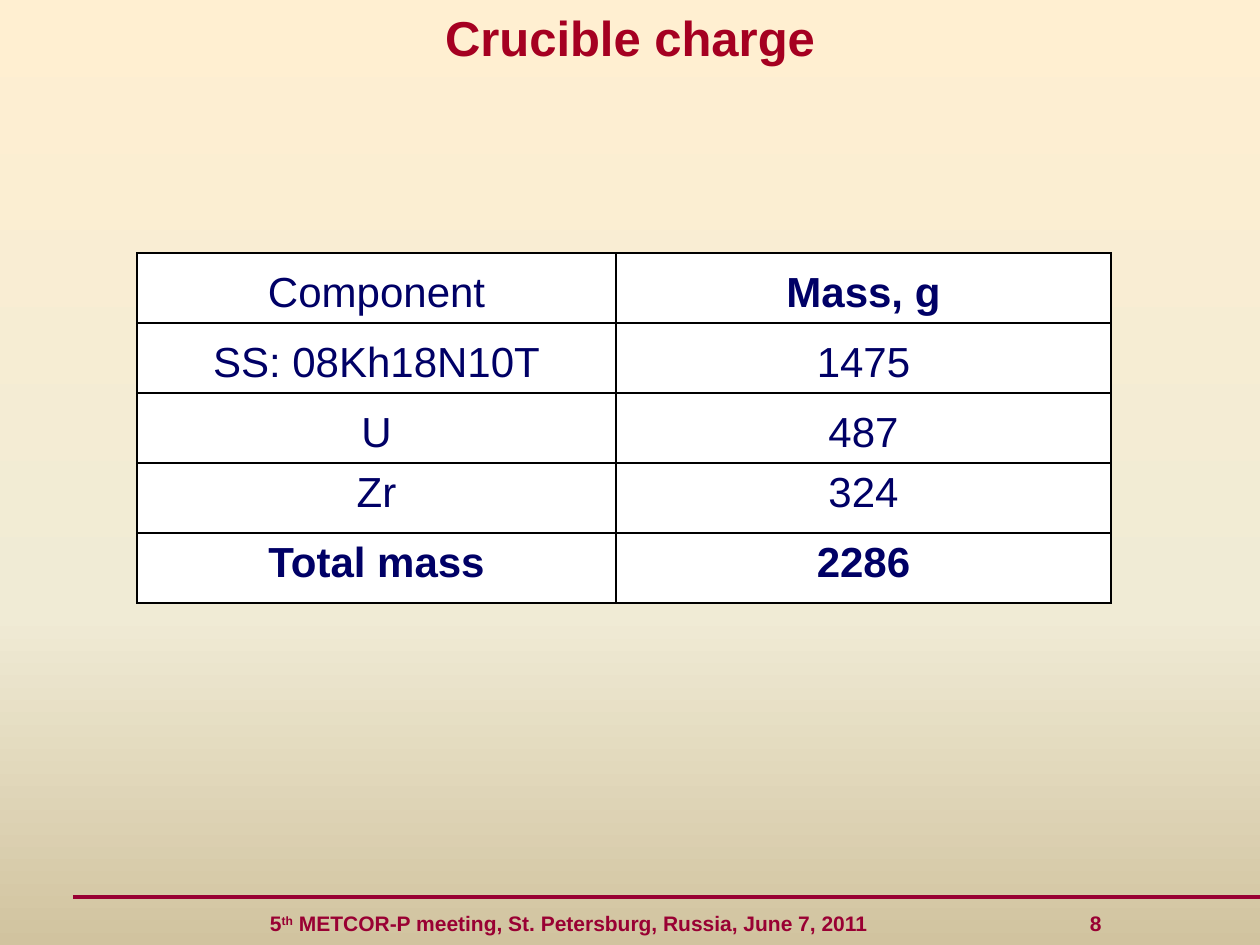
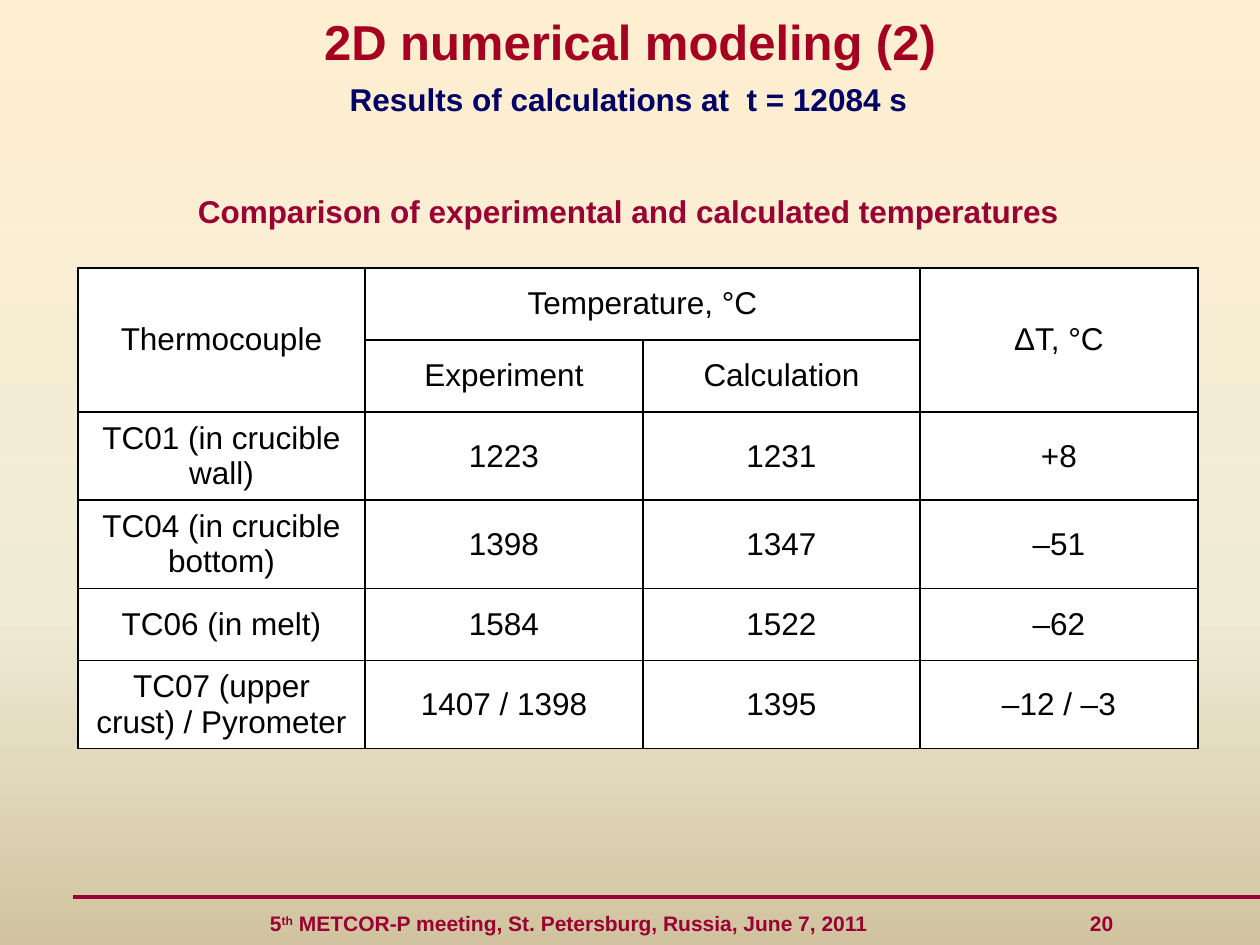
from typing import NamedTuple

from lxml.etree import SubElement
from pptx import Presentation
from pptx.dml.color import RGBColor
from pptx.enum.shapes import MSO_CONNECTOR
from pptx.enum.text import MSO_ANCHOR, MSO_AUTO_SIZE, PP_ALIGN
from pptx.oxml.ns import qn
from pptx.presentation import Presentation as Deck
from pptx.slide import Slide
from pptx.table import _Cell
from pptx.text.text import TextFrame
from pptx.util import Emu, Pt

# Shared look
PX_PER_INCH = 126
EMU_PER_PX = 914400 / PX_PER_INCH
SLIDE_WIDTH, SLIDE_HEIGHT = 1260, 945
FONT = "Arial"
TITLE_RED, BURGUNDY, NAVY = "A50021", "990033", "000066"
BLACK, WHITE = "000000", "FFFFFF"
BACKGROUND_STOPS = ((0, "FFEFD1"), (65, "F0EBD5"), (100, "D1C39F"))
MEETING = " METCOR-P meeting, St. Petersburg, Russia, June 7, 2011"
PAGE_NUMBER_TAB = 820


class Box(NamedTuple):
    left: int
    top: int
    width: int
    height: int


class TextStyle(NamedTuple):
    size: int
    color: str
    bold: bool = False


class Heading(NamedTuple):
    text: str
    box: Box
    color: str


class TableSpec(NamedTuple):
    left: int
    top: int
    columns: tuple[int, ...]
    row_height: int
    rows: tuple[tuple[str, ...], ...]
    style: TextStyle
    anchors: tuple[MSO_ANCHOR, ...]
    bold_cells: tuple[tuple[int, int], ...] = ()
    merges: tuple[tuple[int, int, int, int], ...] = ()


TITLE_BOX = Box(0, 0, SLIDE_WIDTH, 82)
FOOTER_BOX = Box(252, 892, 905, 63)
TITLE_STYLE = TextStyle(28, TITLE_RED, True)
FOOTER_STYLE = TextStyle(12, BURGUNDY, True)

CHARGE_TABLE = TableSpec(
    left=137, top=253, columns=(479, 495), row_height=70,
    rows=(
        ("Component", "Mass, g"),
        ("SS: 08Kh18N10T", "1475"),
        ("U", "487"),
        ("Zr", "324"),
        ("Total mass", "2286"),
    ),
    style=TextStyle(24, NAVY),
    anchors=(MSO_ANCHOR.BOTTOM,) * 3 + (MSO_ANCHOR.TOP,) * 2,
    bold_cells=((0, 1), (4, 0), (4, 1)),
)

TEMPERATURE_TABLE = TableSpec(
    left=78, top=268, columns=(287, 278, 277, 278), row_height=72,
    rows=(
        ("Thermocouple", "Temperature, °C", "", "ΔT, °C"),
        ("", "Experiment", "Calculation", ""),
        ("TC01 (in crucible wall)", "1223", "1231", "+8"),
        ("TC04 (in crucible bottom)", "1398", "1347", "–51"),
        ("TC06 (in melt)", "1584", "1522", "–62"),
        ("TC07 (upper crust) / Pyrometer", "1407 / 1398", "1395", "–12 / –3"),
    ),
    style=TextStyle(18, BLACK),
    anchors=(MSO_ANCHOR.MIDDLE,) * 6,
    merges=((0, 0, 1, 0), (0, 1, 0, 2), (0, 3, 1, 3)),
)

MODELING_HEADINGS = (
    Heading("Results of calculations at  t = 12084 s", Box(243, 76, 771, 45), NAVY),
    Heading("Comparison of experimental and calculated temperatures",
            Box(122, 188, 1013, 45), BURGUNDY),
)


def px(length: int) -> Emu:
    return Emu(round(length * EMU_PER_PX))


def place(box: Box) -> tuple[Emu, ...]:
    return tuple(px(length) for length in box)


def rgb(color: str) -> RGBColor:
    return RGBColor.from_string(color)


def format_text(text_frame: TextFrame, style: TextStyle,
                alignment: PP_ALIGN = PP_ALIGN.CENTER) -> None:
    for paragraph in text_frame.paragraphs:
        paragraph.alignment = alignment
        for run in paragraph.runs:
            run.font.name = FONT
            run.font.size = Pt(style.size)
            run.font.bold = style.bold
            run.font.color.rgb = rgb(style.color)


# Shared parts
def set_background(presentation: Deck) -> None:
    master = presentation.slide_master
    fill = master.background.fill
    fill.gradient()
    fill.gradient_angle = 270
    stop_list = next(master.element.iter(qn("a:gsLst")))
    stop_list.clear()
    for percent, color in BACKGROUND_STOPS:
        stop = SubElement(stop_list, qn("a:gs"), pos=str(percent * 1000))
        SubElement(stop, qn("a:srgbClr"), val=color)


def add_title(slide: Slide, text: str, anchor: MSO_ANCHOR) -> None:
    title = slide.shapes.title
    title.left, title.top, title.width, title.height = place(TITLE_BOX)
    text_frame = title.text_frame
    text_frame.text = text
    text_frame.auto_size = MSO_AUTO_SIZE.NONE
    text_frame.word_wrap = True
    text_frame.vertical_anchor = anchor
    text_frame.margin_top = text_frame.margin_bottom = px(7)
    format_text(text_frame, TITLE_STYLE)


def add_heading(slide: Slide, heading: Heading) -> None:
    text_frame = slide.shapes.add_textbox(*place(heading.box)).text_frame
    text_frame.text = heading.text
    text_frame.word_wrap = True
    text_frame.vertical_anchor = MSO_ANCHOR.MIDDLE
    format_text(text_frame, TextStyle(18, heading.color, True))


def add_footer(slide: Slide, page_number: int) -> None:
    rule = slide.shapes.add_connector(
        MSO_CONNECTOR.STRAIGHT, px(73), px(897), px(SLIDE_WIDTH), px(897))
    rule.line.color.rgb = rgb(BURGUNDY)
    rule.line.width = Pt(2.25)
    SubElement(rule._element.spPr, qn("a:effectLst"))

    text_frame = slide.shapes.add_textbox(*place(FOOTER_BOX)).text_frame
    text_frame.word_wrap = True
    text_frame.vertical_anchor = MSO_ANCHOR.MIDDLE
    text_frame.margin_left = px(18)
    paragraph = text_frame.paragraphs[0]
    for text in ("5", "th", f"{MEETING}\t{page_number}"):
        paragraph.add_run().text = text
    format_text(text_frame, FOOTER_STYLE, PP_ALIGN.LEFT)
    paragraph.runs[1].font._element.set("baseline", "30000")
    tab_list = SubElement(paragraph._p.get_or_add_pPr(), qn("a:tabLst"))
    SubElement(tab_list, qn("a:tab"), pos=str(px(PAGE_NUMBER_TAB)), algn="l")


# Tables
def format_cell(cell: _Cell) -> None:
    properties = cell._tc.get_or_add_tcPr()
    for side in ("lnL", "lnR", "lnT", "lnB"):
        border = SubElement(properties, qn(f"a:{side}"), w=str(Pt(1)))
        border_fill = SubElement(border, qn("a:solidFill"))
        SubElement(border_fill, qn("a:srgbClr"), val=BLACK)
    cell.fill.solid()
    cell.fill.fore_color.rgb = rgb(WHITE)


def add_table(slide: Slide, spec: TableSpec) -> None:
    row_count = len(spec.rows)
    box = Box(spec.left, spec.top, sum(spec.columns), spec.row_height * row_count)
    table = slide.shapes.add_table(row_count, len(spec.columns), *place(box)).table
    table.first_row = table.horz_banding = False
    for column, width in zip(table.columns, spec.columns):
        column.width = px(width)
    for row_index, texts in enumerate(spec.rows):
        table.rows[row_index].height = px(spec.row_height)
        for column_index, text in enumerate(texts):
            cell = table.cell(row_index, column_index)
            cell.text = text
            cell.vertical_anchor = spec.anchors[row_index]
            bold = (row_index, column_index) in spec.bold_cells
            format_text(cell.text_frame, spec.style._replace(bold=bold))
            format_cell(cell)
    for top, left, bottom, right in spec.merges:
        table.cell(top, left).merge(table.cell(bottom, right))


# Slides
def add_slide(presentation: Deck, title: str, anchor: MSO_ANCHOR, page_number: int,
              table: TableSpec, headings: tuple[Heading, ...] = ()) -> None:
    slide = presentation.slides.add_slide(presentation.slide_layouts[5])
    add_footer(slide, page_number)
    add_title(slide, title, anchor)
    add_table(slide, table)
    for heading in headings:
        add_heading(slide, heading)


def main() -> None:
    presentation = Presentation()
    presentation.slide_width = px(SLIDE_WIDTH)
    presentation.slide_height = px(SLIDE_HEIGHT)
    set_background(presentation)
    add_slide(presentation, "Crucible charge", MSO_ANCHOR.TOP, 8, CHARGE_TABLE)
    add_slide(presentation, "2D numerical modeling (2)", MSO_ANCHOR.MIDDLE, 20,
              TEMPERATURE_TABLE, MODELING_HEADINGS)
    presentation.save("out.pptx")


if __name__ == "__main__":
    main()
